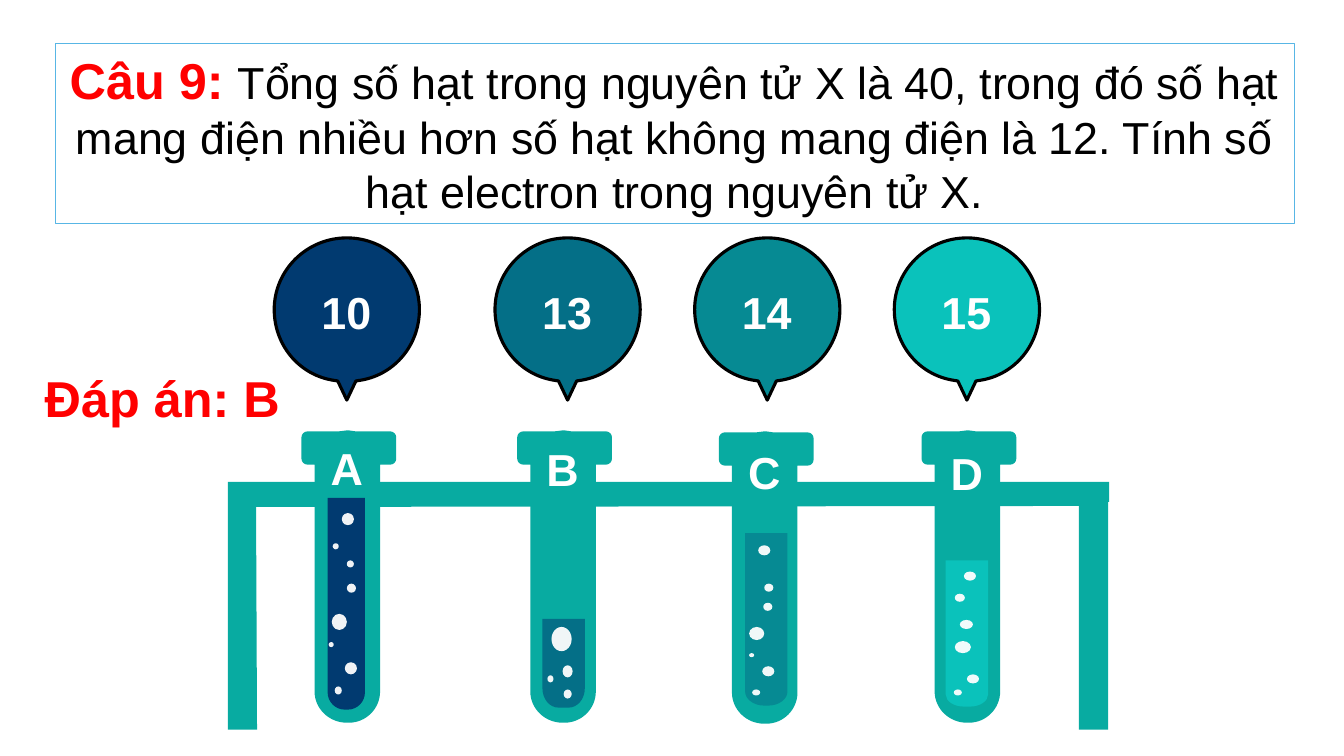
from lxml.etree import SubElement
from pptx import Presentation
from pptx.dml.color import RGBColor
from pptx.enum.shapes import MSO_SHAPE
from pptx.enum.text import MSO_ANCHOR, MSO_AUTO_SIZE, PP_ALIGN
from pptx.oxml.ns import qn
from pptx.util import Inches, Pt

FONT = "Arial"
BEND = .55  # how far a quarter turn's handles reach towards its corner
HUES = {
    "rack": "08ABA1", "white": "FFFFFF", "black": "000000",
    "red": "FF0000", "edge": "58B6E5",
    "A": "013A70", "B": "046F87", "C": "068A93", "D": "0AC2BB",
}

# Each tube: letter, answer, tube centre, tube top, letter top, balloon centre,
# liquid (left, top, width, height, corner rx, corner ry), bubbles
TUBES = [
    ("A", "10", 3.45, 4.27, 4.32, 3.44, (3.25, 4.94, .37, 2.1, .17, .17),
     [(3.39, 5.09, .12, .12), (3.29, 6.09, .15, .16), (3.44, 5.56, .07, .07),
      (3.44, 5.79, .09, .09), (3.42, 6.57, .12, .12), (3.3, 5.39, .06, .06),
      (3.32, 6.81, .07, .08), (3.26, 6.37, .05, .05)]),
    ("B", "13", 5.59, 4.27, 4.33, 5.63, (5.38, 6.14, .42, .88, .16, .19),
     [(5.47, 6.22, .2, .24), (5.59, 6.84, .08, .09), (5.58, 6.6, .1, .12),
      (5.43, 6.7, .06, .07)]),
    ("C", "14", 7.59, 4.28, 4.36, 7.61, (7.39, 5.29, .42, 1.71, .19, .14),
     [(7.52, 5.41, .12, .1), (7.43, 6.22, .15, .13), (7.58, 5.79, .09, .08),
      (7.57, 5.98, .09, .08), (7.56, 6.61, .12, .1), (7.46, 6.84, .08, .06),
      (7.43, 6.48, .05, .04)]),
    ("D", "15", 9.6, 4.27, 4.37, 9.59, (9.38, 5.56, .42, 1.45, .18, .12),
     [(9.56, 5.67, .12, .09), (9.47, 6.36, .16, .12), (9.52, 6.15, .13, .09),
      (9.59, 6.69, .12, .09), (9.46, 6.84, .08, .06), (9.47, 5.89, .1, .08)]),
]


def hue(name):
    return RGBColor.from_string(HUES[name])


def paint(shape, fill, line=None, width=1):
    shape.shadow.inherit = False
    shape.fill.solid()
    shape.fill.fore_color.rgb = hue(fill)
    if line:
        shape.line.color.rgb = hue(line)
        shape.line.width = Pt(width)
    else:
        shape.line.fill.background()


def turn(start, corner, end):
    """A quarter turn from start to end, rounding off the corner."""
    def reach(spot):
        return tuple(p + (q - p) * BEND for p, q in zip(spot, corner))
    return [start, (reach(start), reach(end), end)]


def outline(shapes, steps, fill, line=None, width=1):
    """A step is a point, or a curve of two handles and an end point."""
    curves = [isinstance(step[0], tuple) for step in steps]
    spots = []
    for step, curved in zip(steps, curves):
        spots += step if curved else [step]
    spots = [(Inches(x), Inches(y)) for x, y in spots]
    pen = shapes.build_freeform(*spots[0])
    pen.add_line_segments(spots[1:], close=True)
    shape = pen.convert_to_shape()
    # Join the three points of each curve
    lines = iter(list(shape._element.iter(qn("a:lnTo"))))
    for curved in curves[1:]:
        first = next(lines)
        if curved:
            first.tag = qn("a:cubicBezTo")
            for _ in range(2):
                extra = next(lines)
                first.append(extra[0])
                extra.getparent().remove(extra)
    paint(shape, fill, line, width)


def write(para, text, size, color, bold):
    run = para.add_run()
    run.text = text
    run.font.name = FONT
    run.font.size = Pt(size)
    run.font.bold = bold
    run.font.color.rgb = hue(color)


def label(shapes, box, text, size, color, space=None, inset=None):
    frame = shapes.add_textbox(*map(Inches, box)).text_frame
    frame.word_wrap = True
    frame.auto_size = MSO_AUTO_SIZE.SHAPE_TO_FIT_TEXT
    if inset is not None:
        frame.margin_left = frame.margin_right = Inches(inset)
        frame.margin_top = frame.margin_bottom = Inches(inset)
    para = frame.paragraphs[0]
    para.alignment = PP_ALIGN.CENTER
    para.line_spacing = space
    write(para, text, size, color, True)


def glass(shapes, mid, top):
    left, right = mid - .46, mid + .48
    west, east = mid - .33, mid + .32
    high, low, base, foot = top + .01, top + .34, top + 2.59, top + 2.9
    r = .06
    steps = [(mid - .01, top), (mid + .01, top), (mid + .08, high)]
    steps += turn((right - r, high), (right, high), (right, high + r))
    steps += turn((right, low - r), (right, low), (right - r, low))
    steps += [(east, low)]
    steps += turn((east, base), (east, foot), (mid + .01, foot))
    steps += turn((mid - .01, foot), (west, foot), (west, base))
    steps += [(west, low)]
    steps += turn((left + r, low), (left, low), (left, low - r))
    steps += turn((left, high + r), (left, high), (left + r, high))
    outline(shapes, steps + [(mid - .09, high)], "rack")


def liquid(shapes, box, fill):
    left, top, width, height, rx, ry = box
    right, foot = left + width, top + height
    base = foot - ry
    steps = [(left, top), (right, top)]
    steps += turn((right, base), (right, foot), (right - rx, foot))
    steps += turn((left + rx, foot), (left, foot), (left, base))
    outline(shapes, steps, fill)


def bubble(shapes, box):
    dot = shapes.add_shape(MSO_SHAPE.OVAL, *map(Inches, box))
    paint(dot, "white")
    color = dot._element.spPr.find(qn("a:solidFill"))[0]
    SubElement(color, qn("a:alpha")).set("val", "94000")


def balloon(shapes, mid, text, fill):
    left, right, top, wide = mid - .72, mid + .72, 2.36, 3.07
    steps = turn((mid, top), (right, top), (right, wide))
    steps += [((right, 3.42), (mid + .48, 3.71), (mid + .15, 3.77)),
              (mid + .09, 3.78), (mid, 3.97), (mid - .09, 3.78),
              (mid - .15, 3.77),
              ((mid - .48, 3.71), (left, 3.42), (left, wide))]
    steps += turn((left, wide), (left, top), (mid, top))[1:]
    outline(shapes, steps, fill, "black", 2.25)
    label(shapes, (mid - .53, 2.67, 1.05, .69), text, 32, "white", space=1.2)


def tube(slide, key, answer, mid, top, high, peak, fluid, dots):
    shapes = slide.shapes.add_group_shape().shapes
    glass(shapes, mid, top)
    liquid(shapes, fluid, key)
    for dot in dots:
        bubble(shapes, dot)
    label(shapes, (mid - .37, high, .72, .64), key, 32, "white")
    balloon(shapes, peak, answer, key)


def rack(slide):
    steps = [(2.26, 4.78), (11, 4.78), (11, 4.98), (10.99, 4.98),
             (10.99, 7.24), (10.7, 7.24), (10.7, 5.02), (2.54, 5.03),
             (2.55, 7.24), (2.26, 7.24)]
    outline(slide.shapes, steps, "rack")


def question(slide):
    title = slide.shapes.title
    title.left, title.top = Inches(.55), Inches(.43)
    title.width, title.height = Inches(12.29), Inches(1.79)
    paint(title, "white", "edge")
    frame = title.text_frame
    frame.word_wrap = True
    frame.auto_size = MSO_AUTO_SIZE.NONE
    frame.vertical_anchor = MSO_ANCHOR.MIDDLE
    para = frame.paragraphs[0]
    para.alignment = PP_ALIGN.CENTER
    write(para, "Câu 9: ", 36, "red", True)
    write(para, "Tổng số hạt trong nguyên tử X là 40, trong đó số hạt mang "
          "điện nhiều hơn số hạt không mang điện là 12. Tính số hạt electron "
          "trong nguyên tử X.", 32, "black", False)


def main():
    deck = Presentation()
    deck.slide_width, deck.slide_height = Inches(13.33), Inches(7.5)
    slide = deck.slides.add_slide(deck.slide_layouts[5])
    # Question
    question(slide)
    # Rack with its tubes
    rack(slide)
    for row in TUBES:
        tube(slide, *row)
    # Answer
    label(slide.shapes, (.24, 3.64, 2.74, .61), "Đáp án: B", 36, "red", inset=0)
    deck.save("out.pptx")


if __name__ == "__main__":
    main()
